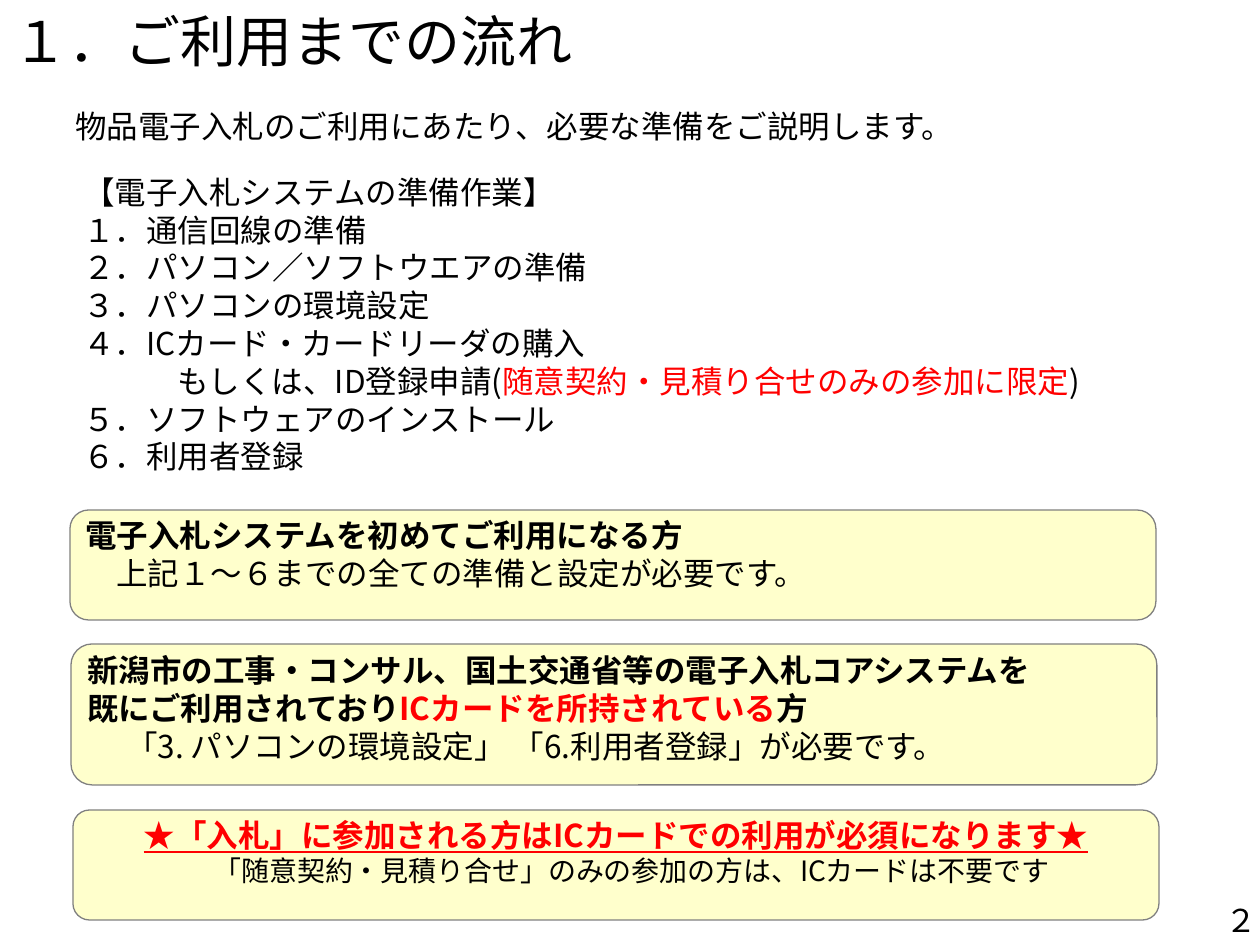
from lxml import etree
from pptx import Presentation
from pptx import util as u
from pptx.dml.color import RGBColor
from pptx.enum import shapes, text
from pptx.oxml.ns import qn

SCALE = 914400 / 126
GOTHIC = "Noto Sans CJK JP"
BLACK, RED, CREAM, GRAY = "000000", "FF0000", "FFFFCC", "808080"


def px(length):
    return u.Emu(round(length * SCALE))


def color(value):
    return RGBColor.from_string(value)


def line(*spans, size=18, bold=False, underline=False, indent=0):
    return {"spans": spans, "size": size, "bold": bold,
            "underline": underline, "indent": indent}


class SlideBuilder:
    def __init__(self, deck):
        self.slide = deck.slides.add_slide(deck.slide_layouts[6])

    def fill_text(self, frame, lines, font=GOTHIC, align=text.PP_ALIGN.LEFT):
        for index, item in enumerate(lines):
            para = frame.add_paragraph() if index else frame.paragraphs[0]
            para.alignment = align
            if item["indent"]:
                properties = para._p.get_or_add_pPr()
                properties.set("marL", str(px(item["indent"])))
                properties.set("indent", "0")
            for words, hue in item["spans"]:
                span = para.add_run()
                span.text = words
                span.font.name = font
                span.font.size = u.Pt(item["size"])
                span.font.bold = item["bold"]
                span.font.underline = item["underline"]
                span.font.color.rgb = color(hue)
                east_asian = etree.SubElement(span._r.get_or_add_rPr(), qn("a:ea"))
                east_asian.set("typeface", font)

    def label(self, bounds, lines, font=GOTHIC, align=text.PP_ALIGN.LEFT,
              anchor=text.MSO_ANCHOR.MIDDLE, wrap=True):
        box = self.slide.shapes.add_textbox(*map(px, bounds))
        frame = box.text_frame
        frame.word_wrap = wrap
        frame.auto_size = text.MSO_AUTO_SIZE.SHAPE_TO_FIT_TEXT
        frame.vertical_anchor = anchor
        self.fill_text(frame, lines, font, align)

    def panel(self, bounds, lines, corner=0.15, align=text.PP_ALIGN.LEFT):
        box = self.slide.shapes.add_shape(
            shapes.MSO_SHAPE.ROUNDED_RECTANGLE, *map(px, bounds))
        box.shadow.inherit = False
        box.adjustments[0] = corner
        box.fill.solid()
        box.fill.fore_color.rgb = color(CREAM)
        box.line.color.rgb = color(GRAY)
        box.line.width = u.Pt(0.75)
        frame = box.text_frame
        frame.word_wrap = True
        frame.vertical_anchor = text.MSO_ANCHOR.TOP
        frame.margin_left = frame.margin_right = px(10)
        frame.margin_top = frame.margin_bottom = px(1)
        self.fill_text(frame, lines, align=align)


def main():
    deck = Presentation()
    deck.slide_width, deck.slide_height = px(1260), px(945)
    page = SlideBuilder(deck)

    page.label((0, 0, 922, 80),
               [line(("１．ご利用までの流れ", BLACK), size=32)], font="Arial")
    page.label((1213, 895, 47, 50), [line(("２", BLACK))], font="Arial",
               align=text.PP_ALIGN.RIGHT, anchor=text.MSO_ANCHOR.TOP, wrap=False)
    page.label((63, 101, 1050, 50),
               [line(("物品電子入札のご利用にあたり、必要な準備をご説明します。", BLACK))])
    page.label((71, 165, 1086, 318), [
        line(("【電子入札システムの準備作業】", BLACK)),
        line(("１．通信回線の準備", BLACK)),
        line(("２．パソコン／ソフトウエアの準備", BLACK)),
        line(("３．パソコンの環境設定", BLACK)),
        line(("４．ICカード・カードリーダの購入", BLACK)),
        line(("もしくは、ID登録申請(", BLACK),
             ("随意契約・見積り合せのみの参加に限定", RED), (")", BLACK), indent=94),
        line(("５．ソフトウェアのインストール", BLACK)),
        line(("６．利用者登録", BLACK)),
    ])

    page.panel((70, 510, 1086, 110), [
        line(("電子入札システムを初めてご利用になる方", BLACK), bold=True),
        line(("上記１～６までの全ての準備と設定が必要です。", BLACK), indent=31),
    ], corner=0.17)
    page.panel((71, 644, 1086, 141), [
        line(("新潟市の工事・コンサル、国土交通省等の電子入札コアシステムを", BLACK), bold=True),
        line(("既にご利用されており", BLACK), ("ICカードを所持されている", RED),
             ("方", BLACK), bold=True),
        line(("「3. パソコンの環境設定」 「6.利用者登録」が必要です。", BLACK), indent=39),
    ])
    page.panel((73, 810, 1086, 110), [
        line(("★「入札」に参加される方はICカードでの利用が必須になります★", RED),
             bold=True, underline=True),
        line(("「随意契約・見積り合せ」のみの参加の方は、ICカードは不要です", BLACK),
             size=16, indent=31),
    ], align=text.PP_ALIGN.CENTER)

    deck.save("out.pptx")


if __name__ == "__main__":
    main()
